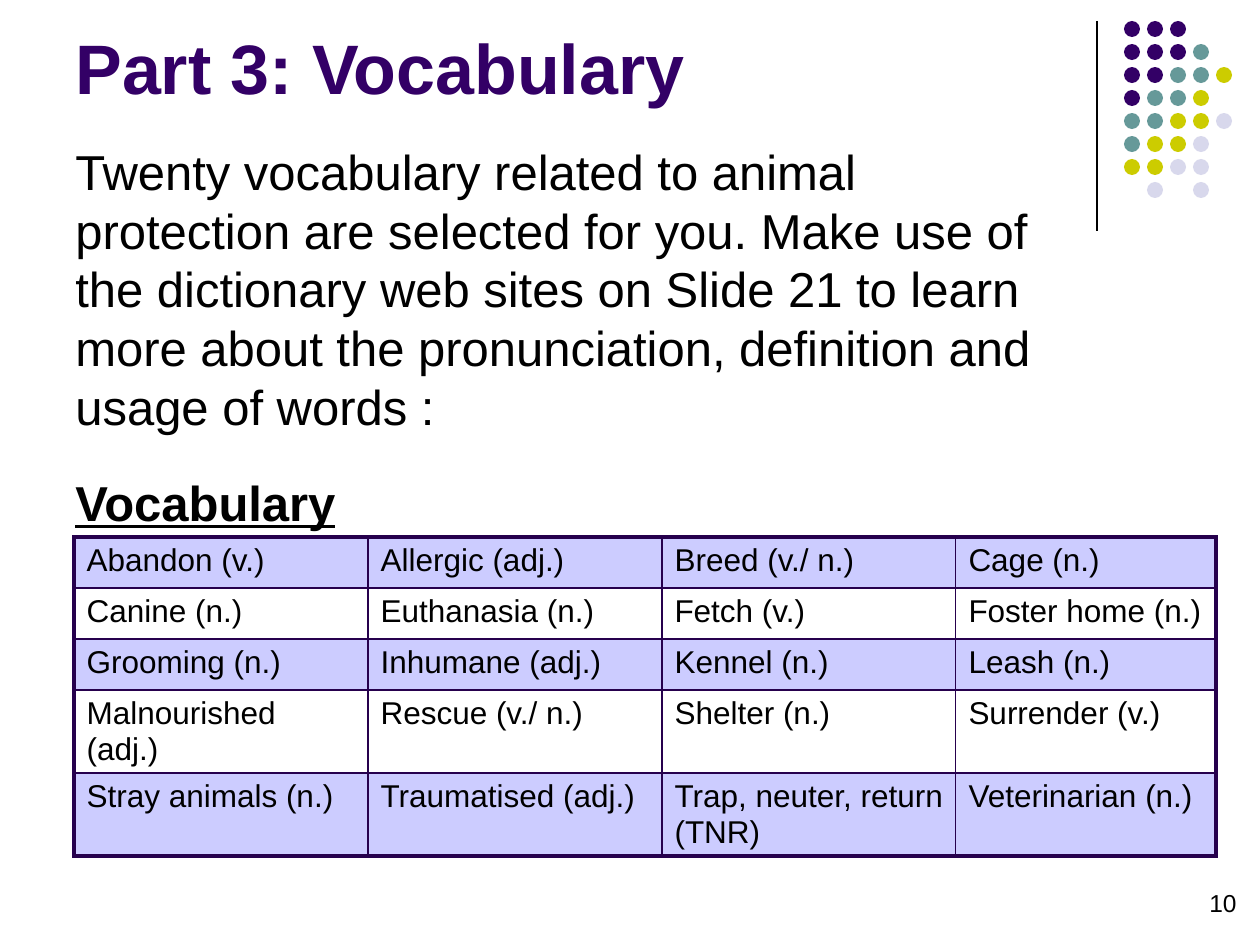
"""Build the vocabulary slide with its word table and corner dot pattern."""
from dataclasses import dataclass

from lxml.etree import SubElement
from pptx import Presentation
from pptx.dml.color import RGBColor
from pptx.enum.shapes import MSO_CONNECTOR as CONN, MSO_SHAPE as SHAPE
from pptx.enum.text import MSO_ANCHOR as ANCHOR, PP_ALIGN as ALIGN
from pptx.oxml.ns import qn
from pptx.slide import Slide
from pptx.table import _Cell as Cell
from pptx.util import Emu, Pt

COLORS = {
    "purple": "330066", "teal": "669999", "lime": "CCCC00", "pale": "D8D8EC",
    "black": "000000", "white": "FFFFFF", "lilac": "CCCCFF", "border": "26004D",
}
FONT = "Arial"
THIN, THICK = 0.75, 2.25

DOTS = ["PPP", "PPPT", "PPTTL", "PTTL", "TTLLF", "TLLF", "LLFF", " F F"]
DOT_COLORS = {"P": "purple", "T": "teal", "L": "lime", "F": "pale"}
DOT_LEFT, DOT_TOP, DOT_SIZE, DOT_STEP = 1124, 21, 16, 23

COL_WIDTHS = [294, 294, 294, 260]
ROW_HEIGHTS = [51, 51, 51, 83, 83]
CELL_BOTTOM = 1
WORDS = [
    ["Abandon (v.)", "Allergic (adj.)", "Breed (v./ n.)", "Cage (n.)"],
    ["Canine (n.)", "Euthanasia (n.)", "Fetch (v.)", "Foster home (n.)"],
    ["Grooming (n.)", "Inhumane (adj.)", "Kennel (n.)", "Leash (n.)"],
    ["Malnourished (adj.)", "Rescue (v./ n.)", "Shelter (n.)", "Surrender (v.)"],
    ["Stray animals (n.)", "Traumatised (adj.)", "Trap, neuter, return (TNR)",
     "Veterinarian (n.)"],
]


@dataclass
class Para:
    """A paragraph of one run with its formatting."""
    text: str
    size: int
    color: str = "black"
    bold: bool = False
    underline: bool = False
    align: ALIGN = ALIGN.LEFT
    before: int = 0


@dataclass
class Block:
    """A text box with its paragraphs."""
    left: int
    top: int
    width: int
    height: int
    paras: list[Para]
    anchor: ANCHOR = ANCHOR.TOP


BLOCKS = [
    Block(63, 17, 1039, 98, [Para("Part 3: Vocabulary", 40, "purple", bold=True)],
          ANCHOR.BOTTOM),
    Block(63, 135, 1023, 709, [
        Para("Twenty vocabulary related to animal protection are selected for you. "
             "Make use of the dictionary web sites on Slide 21 to learn more about "
             "the pronunciation, definition and usage of words :", 28),
        Para("Vocabulary", 28, bold=True, underline=True, before=21),
    ]),
    Block(955, 882, 294, 63, [Para("10", 14, align=ALIGN.RIGHT)]),
]


def px(n: int) -> Emu:
    """Turn px into EMU at 126 px to the inch."""
    return Emu(round(n * 914400 / 126))


def rgb(name: str) -> RGBColor:
    """Look up a named colour."""
    return RGBColor.from_string(COLORS[name])


def write(p, para: Para) -> None:
    """Write one formatted run into a paragraph."""
    p.alignment = para.align
    p.space_before = Pt(para.before)
    r = p.add_run()
    r.text = para.text
    r.font.name, r.font.size = FONT, Pt(para.size)
    r.font.bold, r.font.underline = para.bold, para.underline
    r.font.color.rgb = rgb(para.color)


def draw_block(s: Slide, block: Block) -> None:
    """Draw a text box."""
    sp = s.shapes.add_textbox(px(block.left), px(block.top),
                              px(block.width), px(block.height))
    tf = sp.text_frame
    tf.word_wrap = True
    tf.vertical_anchor = block.anchor
    for i, para in enumerate(block.paras):
        write(tf.add_paragraph() if i else tf.paragraphs[0], para)


def draw_rule(s: Slide, x: int, top: int, bottom: int) -> None:
    """Draw the vertical rule beside the dots."""
    line = s.shapes.add_connector(CONN.STRAIGHT, px(x), px(top), px(x), px(bottom))
    line.line.color.rgb = rgb("black")
    line.line.width = Pt(THIN)
    SubElement(line._element.spPr, qn("a:effectLst"))


def draw_dots(s: Slide) -> None:
    """Draw the grouped grid of coloured dots."""
    group = s.shapes.add_group_shape()
    for row, codes in enumerate(DOTS):
        for col, code in enumerate(codes):
            if code == " ":
                continue
            sp = group.shapes.add_shape(
                SHAPE.OVAL, px(DOT_LEFT + col * DOT_STEP), px(DOT_TOP + row * DOT_STEP),
                px(DOT_SIZE), px(DOT_SIZE))
            sp.shadow.inherit = False
            sp.fill.solid()
            sp.fill.fore_color.rgb = rgb(DOT_COLORS[code])
            sp.line.fill.background()


def add_borders(cell: Cell, outer: dict[str, bool]) -> None:
    """Give a cell thick borders on outer sides and thin ones elsewhere."""
    tc_pr = cell._tc.get_or_add_tcPr()
    for side, is_outer in outer.items():
        ln = SubElement(tc_pr, qn(f"a:ln{side}"), w=str(Pt(THICK if is_outer else THIN)))
        fill = SubElement(ln, qn("a:solidFill"))
        SubElement(fill, qn("a:srgbClr"), val=COLORS["border"])


def draw_table(s: Slide, left: int, top: int) -> None:
    """Draw the banded word table."""
    rows, cols = len(ROW_HEIGHTS), len(COL_WIDTHS)
    table = s.shapes.add_table(rows, cols, px(left), px(top),
                               px(sum(COL_WIDTHS)), px(sum(ROW_HEIGHTS))).table
    table.first_row = table.horz_banding = False
    for column, width in zip(table.columns, COL_WIDTHS):
        column.width = px(width)
    for i, (row, height) in enumerate(zip(table.rows, ROW_HEIGHTS)):
        row.height = px(height)
        for j, cell in enumerate(row.cells):
            add_borders(cell, {"L": j == 0, "R": j == cols - 1,
                               "T": i == 0, "B": i == rows - 1})
            cell.margin_bottom = px(CELL_BOTTOM)
            cell.fill.solid()
            cell.fill.fore_color.rgb = rgb("white" if i % 2 else "lilac")
            write(cell.text_frame.paragraphs[0], Para(WORDS[i][j], 18))


def main() -> None:
    """Build and save the slide."""
    prs = Presentation()
    prs.slide_width, prs.slide_height = px(1260), px(945)
    s = prs.slides.add_slide(prs.slide_layouts[6])
    draw_rule(s, 1097, 21, 231)
    draw_dots(s)
    for block in BLOCKS:
        draw_block(s, block)
    draw_table(s, 74, 537)
    prs.save("out.pptx")


if __name__ == "__main__":
    main()
